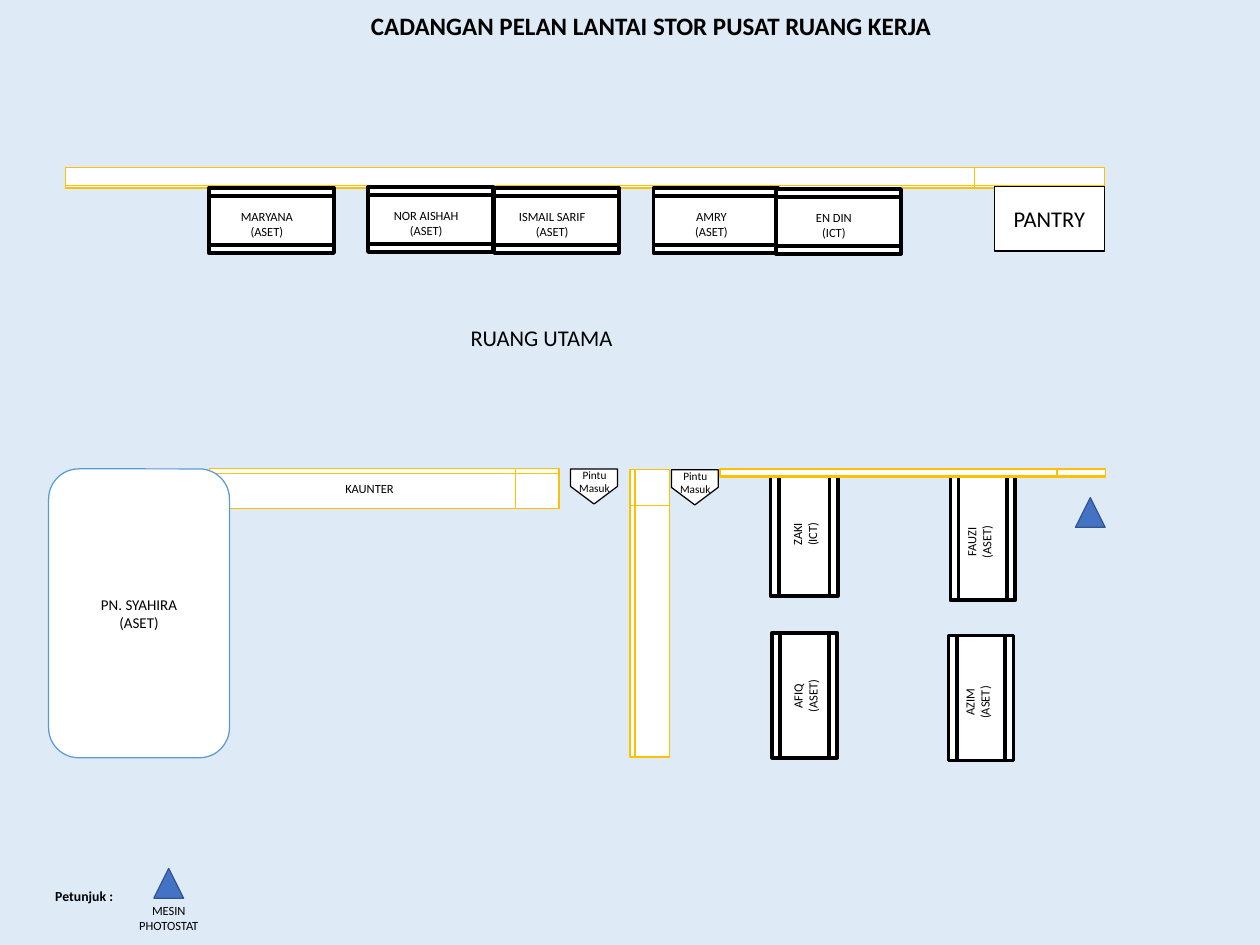
from pptx import Presentation
from pptx.dml.color import RGBColor
from pptx.enum import shapes, text
from pptx.util import Inches, Pt

BACKGROUND = RGBColor(0xDE, 0xEB, 0xF7)
WHITE = RGBColor(0xFF, 0xFF, 0xFF)
BLACK = RGBColor(0, 0, 0)
GOLD = RGBColor(0xFF, 0xC0, 0x00)
ROOM_BLUE = RGBColor(0x5B, 0x9B, 0xD5)
MARK_BLUE = RGBColor(0x44, 0x72, 0xC4)
MARK_EDGE = RGBColor(0x32, 0x54, 0x91)
FONT = "Calibri"
KIND = shapes.MSO_SHAPE

DESK_LONG, DESK_SHORT = 1.39, 0.72
LABEL_W, LABEL_H = 1.11, 0.44
MARK = 0.33


def write(s, words, size=10, bold=False, align=text.PP_ALIGN.CENTER,
          anchor=text.MSO_ANCHOR.TOP, wrap=True):
    """Fill a shape with one paragraph per line of words."""
    tf = s.text_frame
    tf.word_wrap = wrap
    tf.auto_size = text.MSO_AUTO_SIZE.NONE
    tf.vertical_anchor = anchor
    for i, line in enumerate(words.split("\n")):
        p = tf.paragraphs[0] if i == 0 else tf.add_paragraph()
        p.alignment = align
        r = p.add_run()
        r.text = line
        r.font.name, r.font.size, r.font.bold = FONT, Pt(size), bold
        r.font.color.rgb = BLACK


def add_label(sl, box, words, turn=0, **fmt):
    s = sl.shapes.add_textbox(*map(Inches, box))
    s.rotation = turn
    write(s, words, **fmt)


def add_block(sl, kind, box, fill=WHITE, line=BLACK, width=1, turn=0, flip=False):
    """Place a shape in its visible box; a quarter turn swaps its sides."""
    x, y, w, h = box
    if turn:
        x, y, w, h = x + (w - h) / 2, y + (h - w) / 2, h, w
    s = sl.shapes.add_shape(kind, *map(Inches, (x, y, w, h)))
    s.rotation = turn
    s.shadow.inherit = False
    s.fill.solid()
    s.fill.fore_color.rgb = fill
    s.line.color.rgb = line
    s.line.width = Pt(width)
    if flip:
        s._element.spPr.get_or_add_xfrm().set("flipH", "1")
    return s


def add_wall(sl, box, **how):
    add_block(sl, KIND.FLOWCHART_INTERNAL_STORAGE, box, line=GOLD, **how)


def add_desk(sl, box, words, nudge):
    """Desk with a centred label; an upright desk has upward text."""
    x, y, w, h = box
    lying = w > h
    add_block(sl, KIND.FLOWCHART_PREDEFINED_PROCESS, box, width=3, turn=90 if lying else 0)
    label = (x + (w - LABEL_W) / 2 + nudge[0], y + (h - LABEL_H) / 2 + nudge[1],
             LABEL_W, LABEL_H)
    add_label(sl, label, words, turn=0 if lying else 270)


def add_door(sl, x, y):
    add_block(sl, KIND.PENTAGON, (x, y, 0.52, 0.39), turn=90)
    add_label(sl, (x - 0.16, y - 0.06, 0.85, 0.56), "Pintu\nMasuk", size=9)


def add_copier(sl, x, y):
    add_block(sl, KIND.ISOSCELES_TRIANGLE, (x, y, MARK, MARK), fill=MARK_BLUE, line=MARK_EDGE)


def add_title(sl, box, words):
    s = sl.shapes.title
    s.left, s.top, s.width, s.height = map(Inches, box)
    write(s, words, size=20, bold=True)


def add_main_area(sl, x, y, w):
    """Back wall, the row of desks below it, pantry and area name."""
    add_wall(sl, (x, y, w, 0.23), turn=90, flip=True)
    desks = [(3.36, 0.22, "NOR AISHAH\n(ASET)"), (1.59, 0.23, "MARYANA\n(ASET)"),
             (6.53, 0.23, "AMRY\n(ASET)"), (4.76, 0.23, "ISMAIL SARIF\n(ASET)"),
             (7.89, 0.24, "EN DIN\n(ICT)")]
    for dx, dy, words in desks:
        add_desk(sl, (x + dx, y + dy, DESK_LONG, DESK_SHORT), words, (-0.05, 0.04))
    pantry = add_block(sl, KIND.RECTANGLE, (x + w - 1.22, y + 0.21, 1.22, 0.72))
    write(pantry, "PANTRY", size=18, anchor=text.MSO_ANCHOR.MIDDLE)
    add_label(sl, (x + 4.4, y + 1.69, 1.85, 0.4), "RUANG UTAMA", size=18,
              align=text.PP_ALIGN.LEFT, wrap=False)


def add_counter_area(sl, x, y):
    """Counter and the rounded office at its left end."""
    add_wall(sl, (x + 1.79, y, 3.88, 0.44), turn=90)
    add_label(sl, (x + 3.01, y + 0.09, 1.11, 0.27), "KAUNTER")
    room = add_block(sl, KIND.ROUNDED_RECTANGLE, (x, y, 2.01, 3.21), line=ROOM_BLUE)
    write(room, "PN. SYAHIRA\n(ASET)", size=12, anchor=text.MSO_ANCHOR.MIDDLE)


def add_right_area(sl, x, y, w):
    """Upright desks, the wall above them and the copier."""
    left, right = (0.01, 0.01), (-0.04, 0.05)
    desks = [(2.56, 0.07, 0.72, "FAUZI\n(ASET)", right), (2.54, 1.85, 0.72, "AZIM\n(ASET)", right),
             (0.56, 0.02, 0.75, "ZAKI\n(ICT)", left), (0.58, 1.82, 0.72, "AFIQ\n(ASET)", left)]
    for dx, dy, dw, words, nudge in desks:
        add_desk(sl, (x + dx, y + dy, dw, DESK_LONG), words, nudge)
    add_wall(sl, (x, y, w, 0.09), turn=90, flip=True)
    add_copier(sl, x + w - MARK, y + 0.32)


def add_legend(sl, x, y):
    add_label(sl, (x, y + 0.16, 1.29, 0.29), "Petunjuk :", size=11, bold=True)
    add_copier(sl, x + 1.42, y)
    add_label(sl, (x + 1.03, y + 0.33, LABEL_W, LABEL_H), "MESIN PHOTOSTAT")


def main():
    prs = Presentation()
    prs.slide_width, prs.slide_height = Inches(14), Inches(10.5)
    sl = prs.slides.add_slide(prs.slide_layouts[5])
    sl.background.fill.solid()
    sl.background.fill.fore_color.rgb = BACKGROUND

    add_title(sl, (3.88, 0.07, 6.71, 0.44), "CADANGAN PELAN LANTAI STOR PUSAT RUANG KERJA")
    add_main_area(sl, 0.73, 1.86, 11.54)
    add_counter_area(sl, 0.54, 5.21)
    # Entrances on both sides of the dividing wall
    add_wall(sl, (7, 5.22, 0.44, 3.19))
    add_door(sl, 6.34, 5.21)
    add_door(sl, 7.46, 5.22)
    add_right_area(sl, 8, 5.21, 4.28)
    add_legend(sl, 0.29, 9.65)
    prs.save("out.pptx")


if __name__ == "__main__":
    main()
